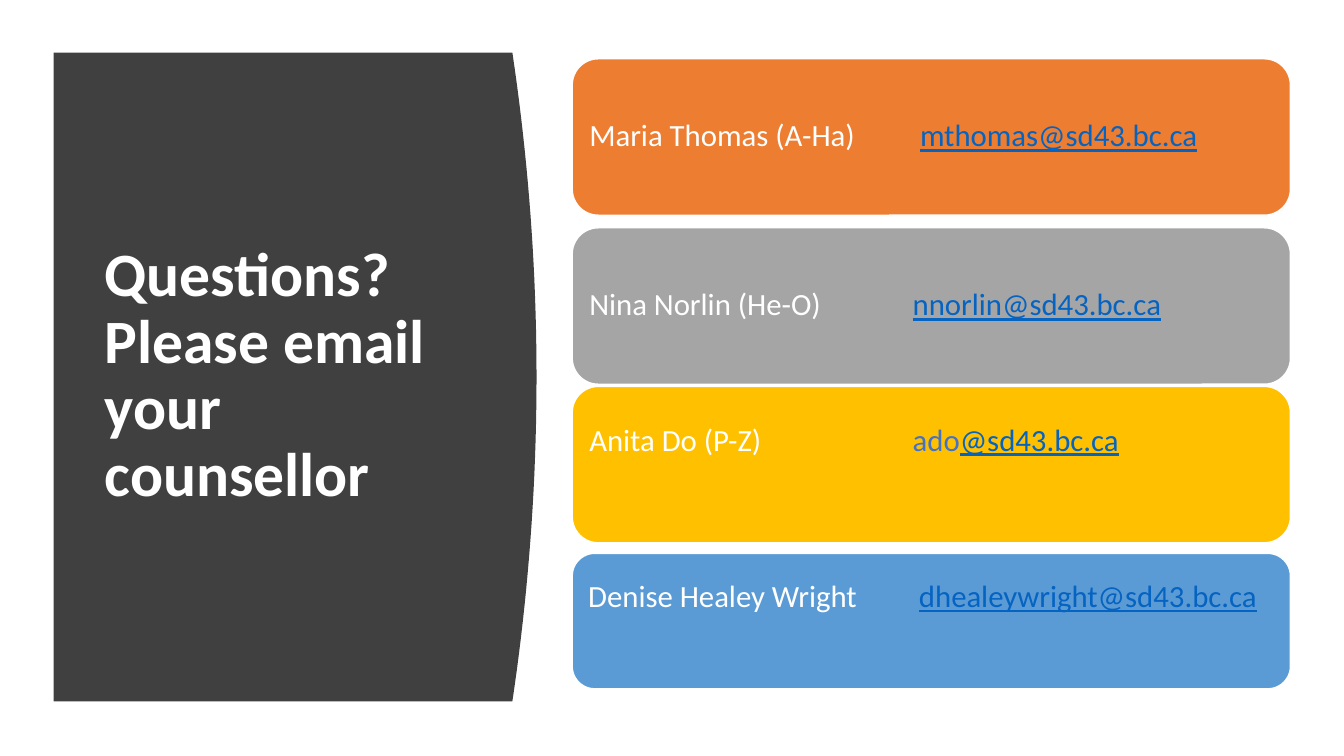
from pptx import Presentation
from pptx.dml.color import RGBColor
from pptx.enum.shapes import MSO_SHAPE
from pptx.enum.text import MSO_ANCHOR, MSO_AUTO_SIZE, PP_ALIGN
from pptx.oxml import parse_xml
from pptx.oxml.ns import nsdecls

PX = 9525
WHITE, LINK, ACCENT = "FFFFFF", "0563C1", "4472C4"
CARD_LEFT, CARD_WIDTH = 545, 684
INSET, LIFT = 9, 44

COUNSELLORS = [
    ("Maria Thomas (A-Ha)", [("mthomas@sd43.bc.ca", True)], "ED7D31", 56, 149, 0, 315),
    ("Nina Norlin (He-O)", [("nnorlin@sd43.bc.ca", True)], "A5A5A5", 217, 149, 0, 308),
    ("Anita Do (P-Z)", [("ado", False), ("@sd43.bc.ca", True)], "FFC000", 368, 149, LIFT, 308),
    ("Denise Healey Wright", [("dhealeywright@sd43.bc.ca", True)], "5B9BD5", 527, 129, LIFT, 315),
]


def px(length):
    """Turn a length in px into EMU."""
    return round(length * PX)


def paint(fill, color):
    """Give a fill one solid colour."""
    fill.solid()
    fill.fore_color.rgb = RGBColor.from_string(color)


def add_text(paragraph, text, size=22, color=WHITE, bold=False, underline=False):
    """Append a formatted run to a paragraph."""
    run = paragraph.add_run()
    run.text = text
    font = run.font
    font.name = "Calibri"
    font.size = size * 12700
    font.bold = bold
    font.underline = underline
    font.color.rgb = RGBColor.from_string(color)


def add_panel(slide):
    """Draw the dark panel with a bowed right edge behind the title."""
    left, top, height, side, bow, steps = 51, 50, 618, 488, 23, 40
    edge = []
    for step in range(steps + 1):
        offset = 2 * step / steps - 1
        edge.append((px(side + bow * (1 - offset ** 2)), px(top + height * step / steps)))
    builder = slide.shapes.build_freeform(px(left), px(top))
    builder.add_line_segments(edge + [(px(left), px(top + height))], close=True)
    panel = builder.convert_to_shape()
    panel.shadow.inherit = False
    paint(panel.fill, "404040")
    panel.line.fill.background()
    slide.shapes._spTree.insert(2, panel._element)


def add_title(slide, text):
    """Place and format the title."""
    title = slide.shapes.title
    title.left, title.top, title.width, title.height = map(px, (90, 107, 359, 503))
    frame = title.text_frame
    frame.word_wrap = True
    frame.auto_size = MSO_AUTO_SIZE.NONE
    frame.vertical_anchor = MSO_ANCHOR.MIDDLE
    paragraph = frame.paragraphs[0]
    paragraph.alignment = PP_ALIGN.LEFT
    paragraph.line_spacing = 0.9
    add_text(paragraph, text, size=44, bold=True)


def add_card(slide, counsellor, email, color, top, height, lift, email_tab):
    """Draw one counsellor card with a name and an e-mail address."""
    card = slide.shapes.add_shape(
        MSO_SHAPE.ROUNDED_RECTANGLE, px(CARD_LEFT), px(top), px(CARD_WIDTH), px(height))
    card.shadow.inherit = False
    paint(card.fill, color)
    paint(card.line.fill, WHITE)
    card.line.width = 12700
    frame = card.text_frame
    frame.word_wrap = True
    frame.vertical_anchor = MSO_ANCHOR.MIDDLE
    frame.margin_left = frame.margin_right = frame.margin_top = px(INSET)
    frame.margin_bottom = px(INSET + lift)
    paragraph = frame.paragraphs[0]
    paragraph.alignment = PP_ALIGN.LEFT
    paragraph.line_spacing = 0.9
    paragraph._p.get_or_add_pPr().append(parse_xml(
        f'<a:tabLst {nsdecls("a")}><a:tab pos="{px(email_tab)}" algn="l"/></a:tabLst>'))
    add_text(paragraph, counsellor + "\t")
    for part, linked in email:
        add_text(paragraph, part, color=LINK if linked else ACCENT, underline=linked)


def main():
    """Build the counsellor contact slide."""
    deck = Presentation()
    deck.slide_width, deck.slide_height = px(1280), px(720)
    slide = deck.slides.add_slide(deck.slide_layouts[5])
    add_panel(slide)
    add_title(slide, "Questions? Please email your counsellor")
    for card in COUNSELLORS:
        add_card(slide, *card)
    deck.save("out.pptx")


if __name__ == "__main__":
    main()
